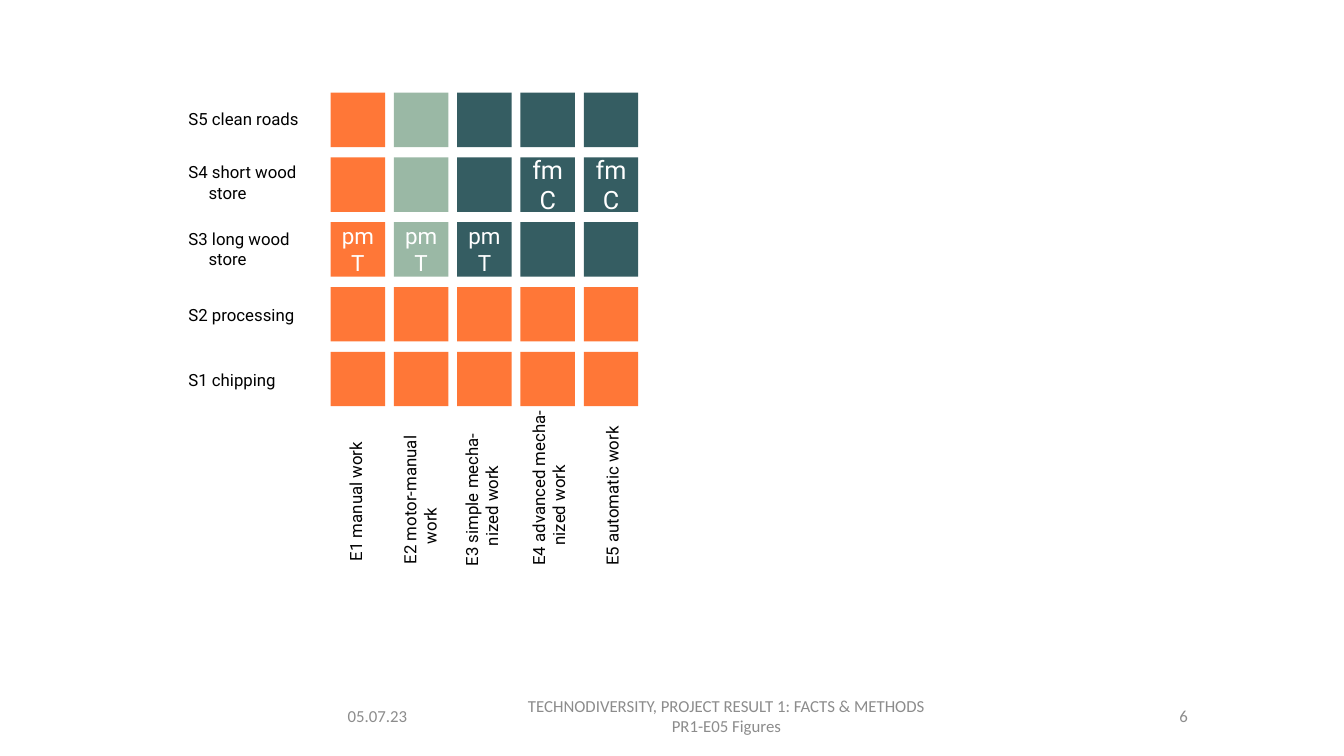
from pptx import Presentation
from pptx.dml.color import RGBColor
from pptx.enum.shapes import MSO_SHAPE as SHAPE
from pptx.enum.text import MSO_ANCHOR as ANCHOR, PP_ALIGN as ALIGN
from pptx.util import Inches, Pt

ORANGE, SAGE, TEAL = "FF7737", "9AB8A5", "355D62"
GREY, BLACK, WHITE = "8C8C8C", "000000", "FFFFFF"
GRID_LEFT, GRID_TOP, CELL = 3.28, 0.92, 0.54
COL_STEP, ROW_STEP = 0.6275, 0.6425

MIXED_ROW = [ORANGE, SAGE, TEAL, TEAL, TEAL]
ORANGE_ROW = [ORANGE] * 5
SUITABILITY = [MIXED_ROW] * 3 + [ORANGE_ROW] * 2
CELL_MARKS = {
    (1, 3): ("fm\nC", 18), (1, 4): ("fm\nC", 18),
    (2, 0): ("pm\nT", 16), (2, 1): ("pm\nT", 16), (2, 2): ("pm\nT", 16),
}
ROAD_LABELS = [
    ("S5 clean roads", 1.03, 0.3),
    ("S4 short wood\nstore", 1.56, 0.5),
    ("S3 long wood\nstore", 2.22, 0.5),
    ("S2 processing", 2.97, 0.3),
    ("S1 chipping", 3.62, 0.3),
]
WORK_LABELS = [
    ("E1 manual work", 2.4, 4.39, 2.25, 0.3),
    ("E2 motor-manual\nwork", 3.01, 4.29, 2.31, 0.5),
    ("E3 simple mecha-\nnized work", 3.62, 4.31, 2.31, 0.5),
    ("E4 advanced mecha-\nnized work", 4.27, 4.29, 2.34, 0.5),
    ("E5 automatic work", 4.89, 4.38, 2.36, 0.3),
]
FOOTERS = [
    ("05.07.23", 3.35, 1.34, ALIGN.LEFT),
    ("TECHNODIVERSITY, PROJECT RESULT 1: FACTS & METHODS\nPR1-E05 Figures",
     4.86, 4.69, ALIGN.CENTER),
    ("6", 9.77, 2.11, ALIGN.RIGHT),
]


def rgb(color):
    """Turn a hex string into a colour."""
    return RGBColor.from_string(color)


def write(sp, text, size, font, color, align, anchor):
    """Fill a shape with evenly formatted paragraphs."""
    tf = sp.text_frame
    tf.word_wrap = True
    tf.vertical_anchor = anchor
    tf.text = text
    for p in tf.paragraphs:
        p.alignment = align
        for r in p.runs:
            r.font.size = Pt(size)
            r.font.name = font
            r.font.color.rgb = rgb(color)


def add_cell(s, row, col, color):
    """Add one square of the matrix with its mark, if any."""
    sp = s.shapes.add_shape(
        SHAPE.RECTANGLE, Inches(GRID_LEFT + col * COL_STEP),
        Inches(GRID_TOP + row * ROW_STEP), Inches(CELL), Inches(CELL))
    sp.shadow.inherit = False
    sp.fill.solid()
    sp.fill.fore_color.rgb = rgb(color)
    sp.line.fill.background()
    if (row, col) in CELL_MARKS:
        text, size = CELL_MARKS[row, col]
        write(sp, text, size, "Roboto", WHITE, ALIGN.CENTER, ANCHOR.MIDDLE)


def add_label(s, text, left, top, width, height, rotation=0):
    """Add an axis label whose second line is indented."""
    sp = s.shapes.add_textbox(
        Inches(left), Inches(top), Inches(width), Inches(height))
    sp.rotation = rotation
    write(sp, text, 12, "Roboto", BLACK, ALIGN.LEFT, ANCHOR.TOP)
    for p in sp.text_frame.paragraphs[1:]:
        p._p.get_or_add_pPr().set("marL", str(Inches(0.2)))


def add_footer(s, text, left, width, align):
    """Add one part of the footer line."""
    sp = s.shapes.add_textbox(
        Inches(left), Inches(6.9), Inches(width), Inches(0.4))
    write(sp, text, 12, "Calibri", GREY, align, ANCHOR.MIDDLE)


def main():
    """Build the slide and save it."""
    prs = Presentation()
    prs.slide_width, prs.slide_height = Inches(13.33), Inches(7.5)
    s = prs.slides.add_slide(prs.slide_layouts[6])
    for footer in FOOTERS:
        add_footer(s, *footer)
    for row, colors in enumerate(SUITABILITY):
        for col, color in enumerate(colors):
            add_cell(s, row, col, color)
    for text, top, height in ROAD_LABELS:
        add_label(s, text, 1.77, top, 1.62, height)
    for label in WORK_LABELS:
        add_label(s, *label, rotation=270)
    prs.save("out.pptx")


if __name__ == "__main__":
    main()
